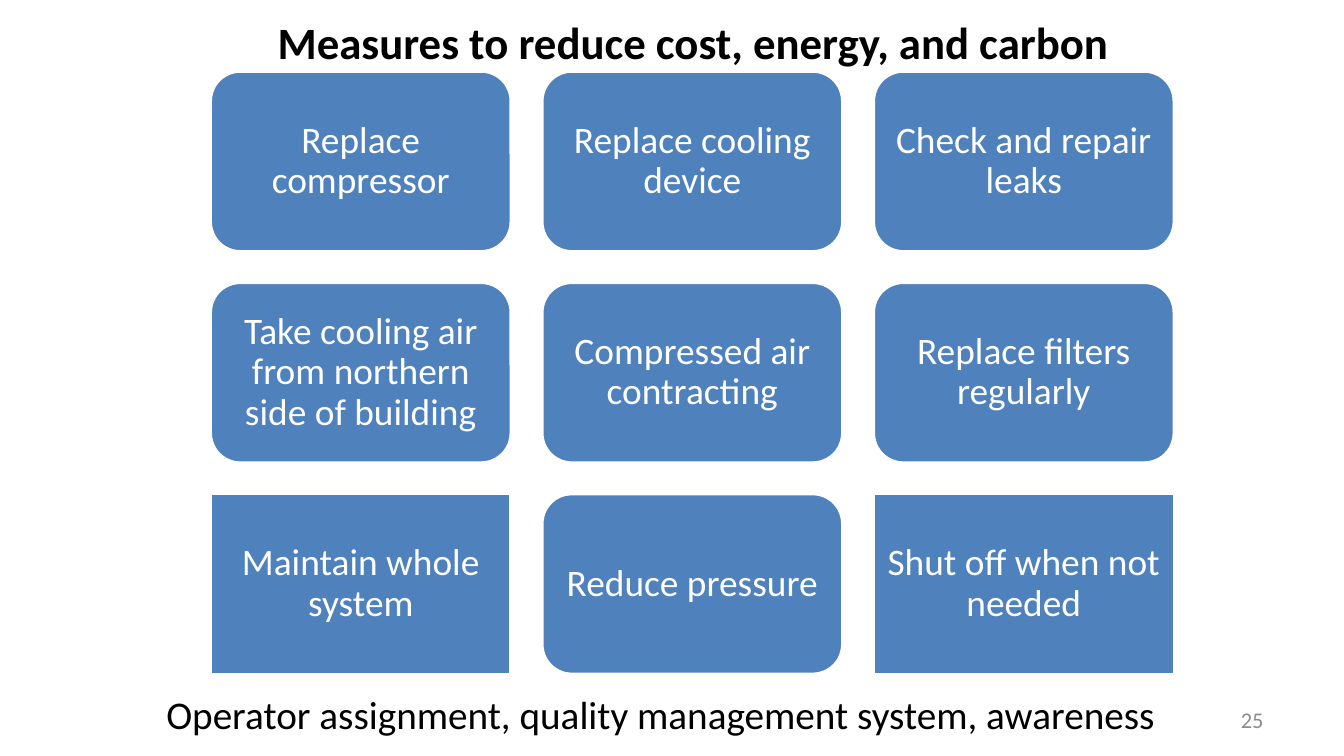
from dataclasses import dataclass

from pptx import Presentation
from pptx.dml.color import RGBColor as RGB
from pptx.enum.shapes import MSO_SHAPE as Shape
from pptx.enum.text import MSO_ANCHOR as Anchor, MSO_AUTO_SIZE as Fit, PP_ALIGN as Align
from pptx.util import Pt


@dataclass(frozen=True)
class Theme:
    font: str = "Calibri"
    ink: RGB = RGB(0, 0, 0)
    paper: RGB = RGB(255, 255, 255)
    blue: RGB = RGB(0x4F, 0x81, 0xBD)
    gray: RGB = RGB(0x8C, 0x8C, 0x8C)
    head: int = 24
    foot: int = 21
    body: int = 20
    small: int = 12


class Deck:
    def __init__(self, theme):
        self.theme = theme
        self.file = Presentation()
        self.file.slide_width, self.file.slide_height = Pt(720), Pt(405)
        self.slide = self.file.slides.add_slide(self.file.slide_layouts[5])

    def add_text(self, frame, text, size, color, align, bold=False):
        par = frame.paragraphs[0]
        par.alignment = align
        run = par.add_run()
        run.text = text
        font = run.font
        font.name, font.size, font.bold = self.theme.font, Pt(size), bold
        font.color.rgb = color
        return par

    def title(self, text, left, top, width, height):
        box = self.slide.shapes.title
        box.left, box.top, box.width, box.height = map(Pt, (left, top, width, height))
        frame = box.text_frame
        frame.vertical_anchor = Anchor.TOP
        frame.auto_size = Fit.SHAPE_TO_FIT_TEXT
        self.add_text(frame, text, self.theme.head, self.theme.ink, Align.CENTER, True)

    def tile(self, text, kind, left, top, width, height):
        box = self.slide.shapes.add_shape(kind, *map(Pt, (left, top, width, height)))
        box.shadow.inherit = False
        box.fill.solid()
        box.fill.fore_color.rgb = self.theme.blue
        box.line.color.rgb = self.theme.paper
        box.line.width = Pt(2)
        frame = box.text_frame
        frame.word_wrap = True
        frame.vertical_anchor = Anchor.MIDDLE
        frame.margin_left = frame.margin_right = Pt(6)
        frame.margin_top = frame.margin_bottom = Pt(6)
        par = self.add_text(frame, text, self.theme.body, self.theme.paper, Align.CENTER)
        par.line_spacing = 0.9

    def label(self, text, left, top, width, height, size, color,
              align=Align.LEFT, anchor=Anchor.TOP, fit=Fit.NONE, wrap=True):
        box = self.slide.shapes.add_textbox(*map(Pt, (left, top, width, height)))
        frame = box.text_frame
        frame.word_wrap, frame.auto_size = wrap, fit
        frame.vertical_anchor = anchor
        self.add_text(frame, text, size, color, align)


ROUND, RECT = Shape.ROUNDED_RECTANGLE, Shape.RECTANGLE
MEASURES = [
    [("Replace compressor", ROUND),
     ("Replace cooling device", ROUND),
     ("Check and repair leaks", ROUND)],
    [("Take cooling air from northern side of building", ROUND),
     ("Compressed air contracting", ROUND),
     ("Replace filters regularly", ROUND)],
    [("Maintain whole system", RECT),
     ("Reduce pressure", ROUND),
     ("Shut off when not needed", RECT)],
]
LEFT, TOP = 112.6, 38
WIDE, HIGH, GAP = 161.4, 97, 16.2


def main():
    theme = Theme()
    deck = Deck(theme)
    deck.title("Measures to reduce cost, energy, and carbon", 58.5, 4.5, 625.5, 36)
    for row, line in enumerate(MEASURES):
        for col, (text, kind) in enumerate(line):
            deck.tile(text, kind, LEFT + col * (WIDE + GAP),
                      TOP + row * (HIGH + GAP), WIDE, HIGH)
    deck.label("Operator assignment, quality management system, awareness",
               82, 366.5, 565, 32.5, theme.foot, theme.ink,
               fit=Fit.SHAPE_TO_FIT_TEXT, wrap=False)
    deck.label("25", 516, 375, 168, 21.5, theme.small, theme.gray,
               Align.RIGHT, Anchor.MIDDLE)
    deck.file.save("out.pptx")


if __name__ == "__main__":
    main()
